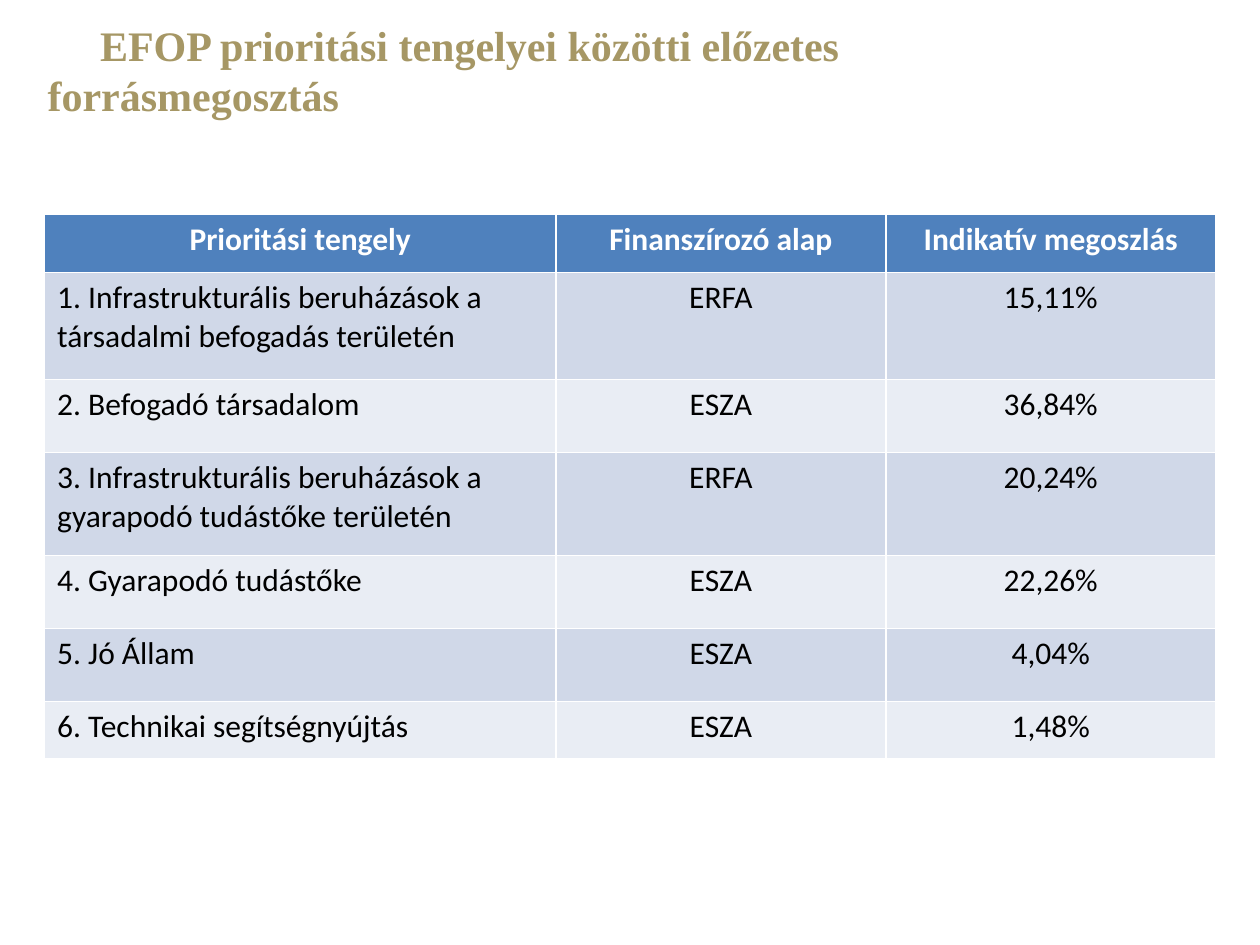
from pptx import Presentation
from pptx.dml.color import RGBColor
from pptx.enum.text import MSO_ANCHOR, PP_ALIGN
from pptx.util import Pt

TOP = MSO_ANCHOR.TOP
LEFT, CENTER = PP_ALIGN.LEFT, PP_ALIGN.CENTER
TITLE_ONLY_LAYOUT = 5

THEME = {
    "title_font": "Times New Roman",
    "title_size": Pt(24),
    "title_color": RGBColor.from_string("A69765"),
    "table_font": "Calibri",
    "table_size": Pt(18),
    "header_fill": RGBColor.from_string("4F81BD"),
    "header_text": RGBColor.from_string("FFFFFF"),
    "band_fills": [RGBColor.from_string("E9EDF4"), RGBColor.from_string("D0D8E8")],
    "body_text": RGBColor.from_string("000000"),
}

ROWS = [
    ("Prioritási tengely", "Finanszírozó alap", "Indikatív megoszlás"),
    ("1. Infrastrukturális beruházások a társadalmi befogadás területén", "ERFA", "15,11%"),
    ("2. Befogadó társadalom", "ESZA", "36,84%"),
    ("3. Infrastrukturális beruházások a gyarapodó tudástőke területén", "ERFA", "20,24%"),
    ("4. Gyarapodó tudástőke", "ESZA", "22,26%"),
    ("5. Jó Állam", "ESZA", "4,04%"),
    ("6. Technikai segítségnyújtás", "ESZA", "1,48%"),
]
COLUMN_WIDTHS = [292.2, 188.5, 188.5]
ROW_HEIGHTS = [33.1, 61.1, 41.7, 58.9, 41.7, 41.7, 33.1]

presentation = Presentation()
presentation.slide_width, presentation.slide_height = Pt(720), Pt(540)
slide = presentation.slides.add_slide(presentation.slide_layouts[TITLE_ONLY_LAYOUT])

# Title with an indented first line
title = slide.shapes.title
title.left, title.top, title.width, title.height = Pt(20), Pt(3), Pt(476), Pt(100)
title_frame = title.text_frame
title_frame.text = "EFOP prioritási tengelyei közötti előzetes forrásmegosztás"
title_frame.word_wrap = True
title_frame.vertical_anchor = TOP
title_frame.margin_top = Pt(8)
paragraph = title_frame.paragraphs[0]
paragraph.alignment = LEFT
properties = paragraph._p.get_or_add_pPr()
properties.set("marL", "0")
properties.set("indent", str(Pt(30)))
font = paragraph.runs[0].font
font.name, font.size, font.bold = THEME["title_font"], THEME["title_size"], True
font.color.rgb = THEME["title_color"]

# Funding table; its default style supplies the white borders
table = slide.shapes.add_table(
    len(ROWS), len(COLUMN_WIDTHS), Pt(25.5), Pt(122.6),
    Pt(sum(COLUMN_WIDTHS)), Pt(sum(ROW_HEIGHTS)),
).table
for column, width in zip(table.columns, COLUMN_WIDTHS):
    column.width = Pt(width)
for row, height in zip(table.rows, ROW_HEIGHTS):
    row.height = Pt(height)

for row_index, values in enumerate(ROWS):
    is_header = row_index == 0
    for column_index, value in enumerate(values):
        cell = table.cell(row_index, column_index)
        cell.text = value
        cell.vertical_anchor = TOP
        cell.fill.solid()
        cell.fill.fore_color.rgb = (
            THEME["header_fill"] if is_header else THEME["band_fills"][row_index % 2]
        )
        paragraph = cell.text_frame.paragraphs[0]
        paragraph.alignment = CENTER if is_header or column_index > 0 else LEFT
        font = paragraph.runs[0].font
        font.name, font.size, font.bold = THEME["table_font"], THEME["table_size"], is_header
        font.color.rgb = THEME["header_text"] if is_header else THEME["body_text"]

presentation.save("out.pptx")
